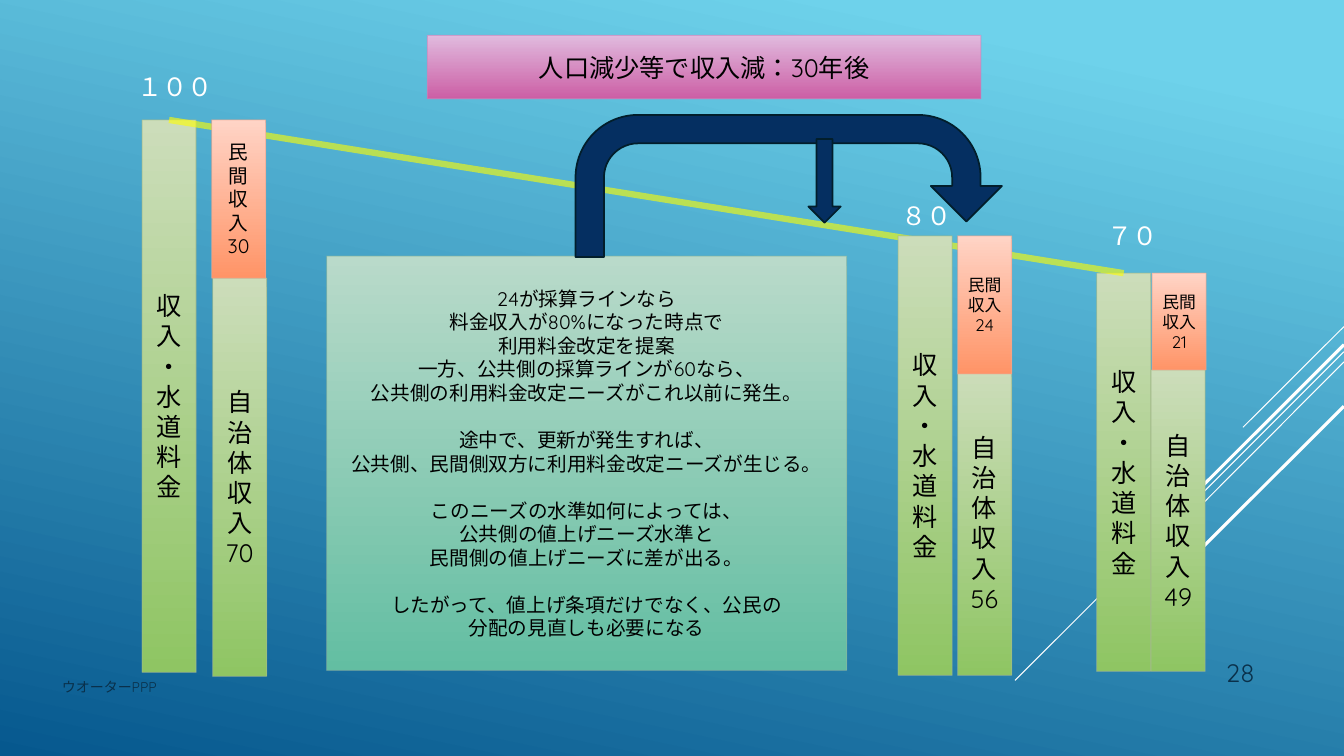
from lxml import etree
from pptx import Presentation
from pptx.dml.color import RGBColor
from pptx.enum.lang import MSO_LANGUAGE_ID
from pptx.enum.shapes import MSO_CONNECTOR, MSO_SHAPE
from pptx.enum.text import MSO_ANCHOR, MSO_AUTO_SIZE, PP_ALIGN
from pptx.oxml.ns import qn
from pptx.util import Inches, Pt

RECTANGLE = MSO_SHAPE.RECTANGLE
UTURN_ARROW, DOWN_ARROW = MSO_SHAPE.U_TURN_ARROW, MSO_SHAPE.DOWN_ARROW
STRAIGHT = MSO_CONNECTOR.STRAIGHT
TOP, MIDDLE, BOTTOM = MSO_ANCHOR.TOP, MSO_ANCHOR.MIDDLE, MSO_ANCHOR.BOTTOM
LEFT, CENTER, RIGHT = PP_ALIGN.LEFT, PP_ALIGN.CENTER, PP_ALIGN.RIGHT
JAPANESE = MSO_LANGUAGE_ID.JAPANESE
FIXED_SIZE, GROW = MSO_AUTO_SIZE.NONE, MSO_AUTO_SIZE.SHAPE_TO_FIT_TEXT

COLUMNS, ROWS = 133.33, 75
BAR_WIDTH = 5.35
TOP_SIDE = 0
FONT = "Quicksand"
BLACK, WHITE, NAVY, FOOTER = "000000", "FFFFFF", "052F61", "0A304A"
GREEN = ("CCDDBA", "8FC563", "A4BB8B")
ORANGE = ("FFD4C6", "FF9467", "EEA78F")
PINK = ("E0BADE", "CC5FA5", "C089BD")
TEAL = ("B9DACA", "63BEA2", "8AB7A1")

RAYS = [
    (133.33, 32.4, 123.3, 42.4, 0.75),
    (133.33, 34.9, 100.7, 67.5, 0.75),
    (133.33, 35.9, 112.6, 56.7, 0.75),
    (133.33, 34.2, 114.2, 53.3, 2.25),
    (133.33, 40.3, 119.4, 54.2, 2.25),
]
TOTAL_BARS = {
    "100": (14.1, 11.9, 54.8),
    "70": (108.8, 27.1, 39.5),
    "80": (89.1, 23.4, 43.6),
}
PUBLIC_BARS = [
    ("70", 21.1, 27.6, 39.5),
    ("49", 114.2, 36.7, 29.9),
    ("56", 95, 36.7, 30.3),
]
PRIVATE_BARS = [
    ("30", 21, 11.9, 15.7, 14),
    ("21", 114.3, 27.1, 9.6, 12),
    ("24", 95, 23.4, 13.7, 12),
]
LABELS = [
    ("１００", 12.7, 6.6, 10.1),
    ("７０", 108.9, 21.4, 7.7),
    ("８０", 88.5, 19.4, 7.7),
]
PROPOSAL = [
    ["24が採算ラインなら", "料金収入が80%になった時点で", "利用料金改定を提案",
     "一方、公共側の採算ラインが60なら、",
     "公共側の利用料金改定ニーズがこれ以前に発生。"],
    ["途中で、更新が発生すれば、",
     "公共側、民間側双方に利用料金改定ニーズが生じる。"],
    ["このニーズの水準如何によっては、", "公共側の値上げニーズ水準と",
     "民間側の値上げニーズに差が出る。"],
    ["したがって、値上げ条項だけでなく、公民の", "分配の見直しも必要になる"],
]


def rgb(value):
    """Turn a hex string into a colour."""
    return RGBColor.from_string(value)


def grid(*cells):
    """Turn grid cells of a tenth of an inch into lengths."""
    return [Inches(cell / 10) for cell in cells]


def set_attributes(target, values):
    """Set every attribute named in a dict of format values."""
    for name, value in values.items():
        setattr(target, name, value)


def set_gradient(fill, stops, clockwise_angle):
    """Give a fill two gradient stops, each a position and a colour."""
    fill.gradient()
    fill.gradient_angle = 360 - clockwise_angle
    for stop, (position, color) in zip(fill.gradient_stops, stops):
        stop.position = position
        stop.color.rgb = rgb(color)


def set_line(line, color, width, opacity=100):
    """Format a line with colour, width and percentage of opacity."""
    line.fill.solid()
    line.fill.fore_color.rgb = rgb(color)
    line.width = Pt(width)
    if opacity < 100:
        color_element = line.fill._xPr.find(".//" + qn("a:srgbClr"))
        etree.SubElement(color_element, qn("a:alpha"), val=str(opacity * 1000))


def write_text(shape, groups, size, color=BLACK, align=CENTER, anchor=MIDDLE,
               auto_size=FIXED_SIZE):
    """Write groups of lines, with one line of space between groups."""
    frame = shape.text_frame
    side, edge = grid(0.95, 0.5)
    set_attributes(frame, {
        "word_wrap": True, "auto_size": auto_size, "vertical_anchor": anchor,
        "margin_left": side, "margin_right": side,
        "margin_top": edge, "margin_bottom": edge,
    })
    lines = [(text, number > 0 and index == 0)
             for number, group in enumerate(groups)
             for index, text in enumerate(group)]
    for index, (text, starts_group) in enumerate(lines):
        paragraph = frame.add_paragraph() if index else frame.paragraphs[0]
        set_attributes(paragraph, {
            "alignment": align, "line_spacing": 1.0,
            "space_before": Pt(size * 1.2 if starts_group else 0),
        })
        run = paragraph.add_run()
        run.text = text
        set_attributes(run.font, {
            "name": FONT, "size": Pt(size), "bold": False,
            "language_id": JAPANESE,
        })
        run.font.color.rgb = rgb(color)


def style_panel(shape, palette):
    """Give a shape a vertical gradient and a thin translucent border."""
    start, end, border = palette
    set_gradient(shape.fill, [(0, start), (1, end)], 90)
    set_line(shape.line, border, 0.75, 60)


def add_panel(slide, place, palette, groups, size):
    """Add a gradient rectangle holding centred text."""
    panel = slide.shapes.add_shape(RECTANGLE, *grid(*place))
    panel.shadow.inherit = False
    style_panel(panel, palette)
    write_text(panel, groups, size)
    return panel


def add_bar(slide, left, top, height, palette, lines, size=18):
    """Add one bar of the standard width."""
    return add_panel(slide, (left, top, BAR_WIDTH, height), palette, [lines], size)


def add_label(slide, place, text, size, color, **text_format):
    """Add a text box with a single line."""
    box = slide.shapes.add_textbox(*grid(*place))
    write_text(box, [[text]], size, color, **text_format)


def add_line(slide, ends, color, width, opacity=100):
    """Add a straight line without a shadow."""
    line = slide.shapes.add_connector(STRAIGHT, *grid(*ends))
    set_line(line.line, color, width, opacity)
    etree.SubElement(line._element.spPr, qn("a:effectLst"))
    return line


def add_arrow(slide, kind, place, adjustments=()):
    """Add a navy block arrow."""
    arrow = slide.shapes.add_shape(kind, *grid(*place))
    arrow.shadow.inherit = False
    arrow.fill.solid()
    arrow.fill.fore_color.rgb = rgb(NAVY)
    set_line(arrow.line, "021E2B", 1.25)
    for index, value in enumerate(adjustments):
        arrow.adjustments[index] = value


def add_title(slide, place, text):
    """Place and format the title."""
    title = slide.shapes.title
    set_attributes(title, dict(zip(("left", "top", "width", "height"), grid(*place))))
    style_panel(title, PINK)
    write_text(title, [[text]], 18)


def main():
    """Build the slide and save it."""
    presentation = Presentation()
    presentation.slide_width, presentation.slide_height = grid(COLUMNS, ROWS)
    slide = presentation.slides.add_slide(presentation.slide_layouts[5])
    set_gradient(slide.background.fill, [(0.1, "6ED2EB"), (1, "06588E")], 102)
    add_title(slide, (42.4, 3.5, 54.9, 6.3), "人口減少等で収入減：30年後")
    for *ends, width in RAYS:
        add_line(slide, ends, WHITE, width)

    totals = {level: add_bar(slide, *place, GREEN, ["収入", "・", "水道料金"])
              for level, place in TOTAL_BARS.items()}
    decline = add_line(slide, (16.7, 11.9, 111.5, 27.1), "FFFF00", 4.5, 60)
    decline.begin_connect(totals["100"], TOP_SIDE)
    decline.end_connect(totals["70"], TOP_SIDE)
    slide.shapes._spTree.append(totals["80"]._element)

    for amount, *place in PUBLIC_BARS:
        add_bar(slide, *place, GREEN, ["自治体収入", amount])
    for amount, *place, size in PRIVATE_BARS:
        add_bar(slide, *place, ORANGE, ["民間収入", amount], size)
    for text, left, top, width in LABELS:
        add_label(slide, (left, top, width, 4), text, 18, WHITE,
                  align=LEFT, anchor=TOP, auto_size=GROW)

    add_panel(slide, (32.4, 25.4, 51.6, 41.1), TEAL, PROPOSAL, 14)
    add_arrow(slide, UTURN_ARROW, (57.1, 11.4, 42.3, 14.1),
              (0.2, 0.25, 0.25, 0.44, 0.75))
    add_arrow(slide, DOWN_ARROW, (80.2, 13.8, 3.2, 8.3))
    add_label(slide, (5.2, 66.8, 12.5, 4), "ウオーターPPP", 10, FOOTER,
              align=LEFT, anchor=TOP)
    add_label(slide, (112.9, 61.4, 12.5, 7.3), "28", 18, FOOTER,
              align=RIGHT, anchor=BOTTOM)
    presentation.save("out.pptx")


if __name__ == "__main__":
    main()
